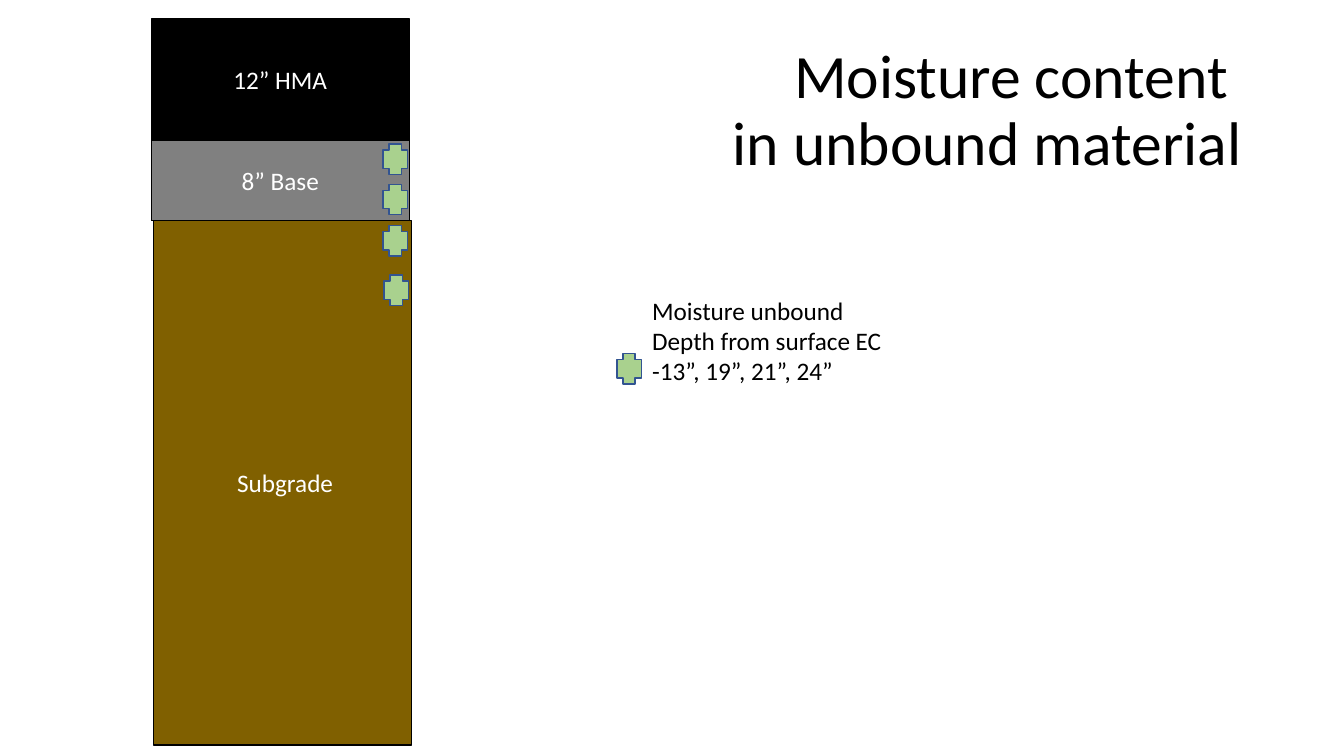
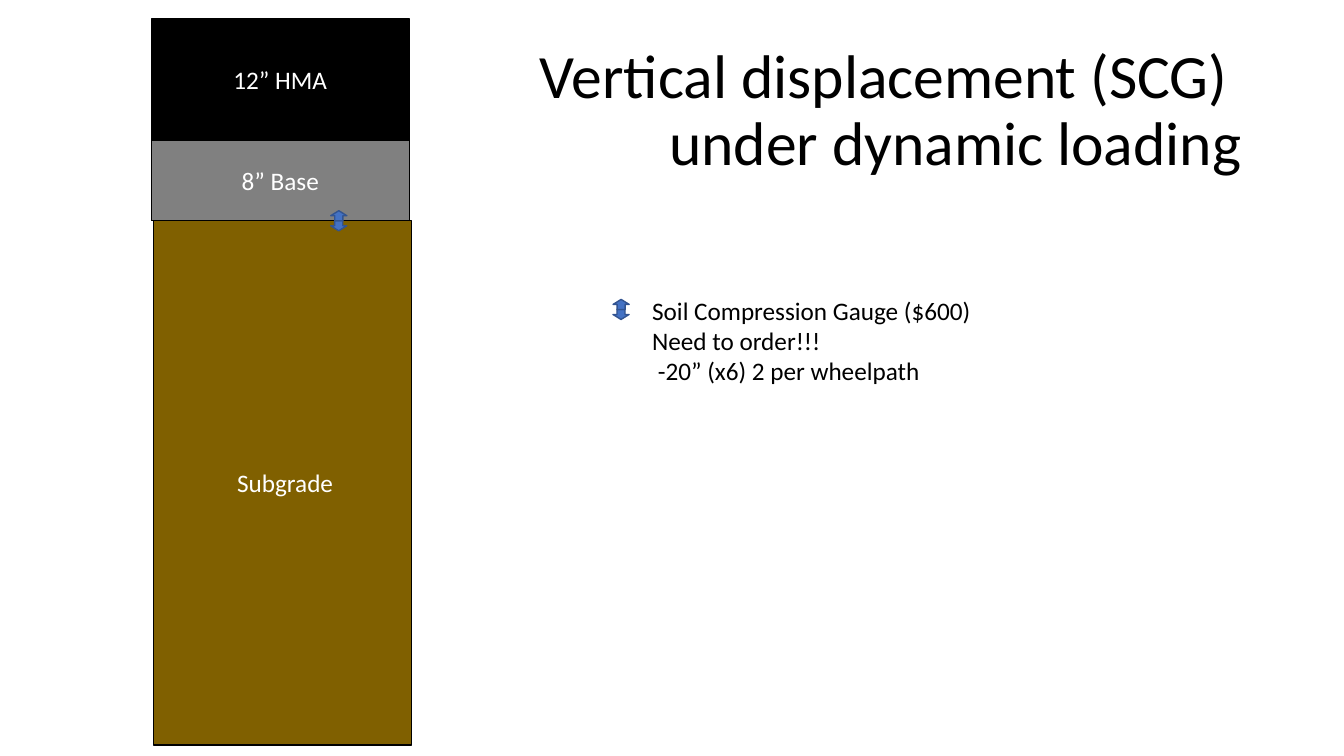
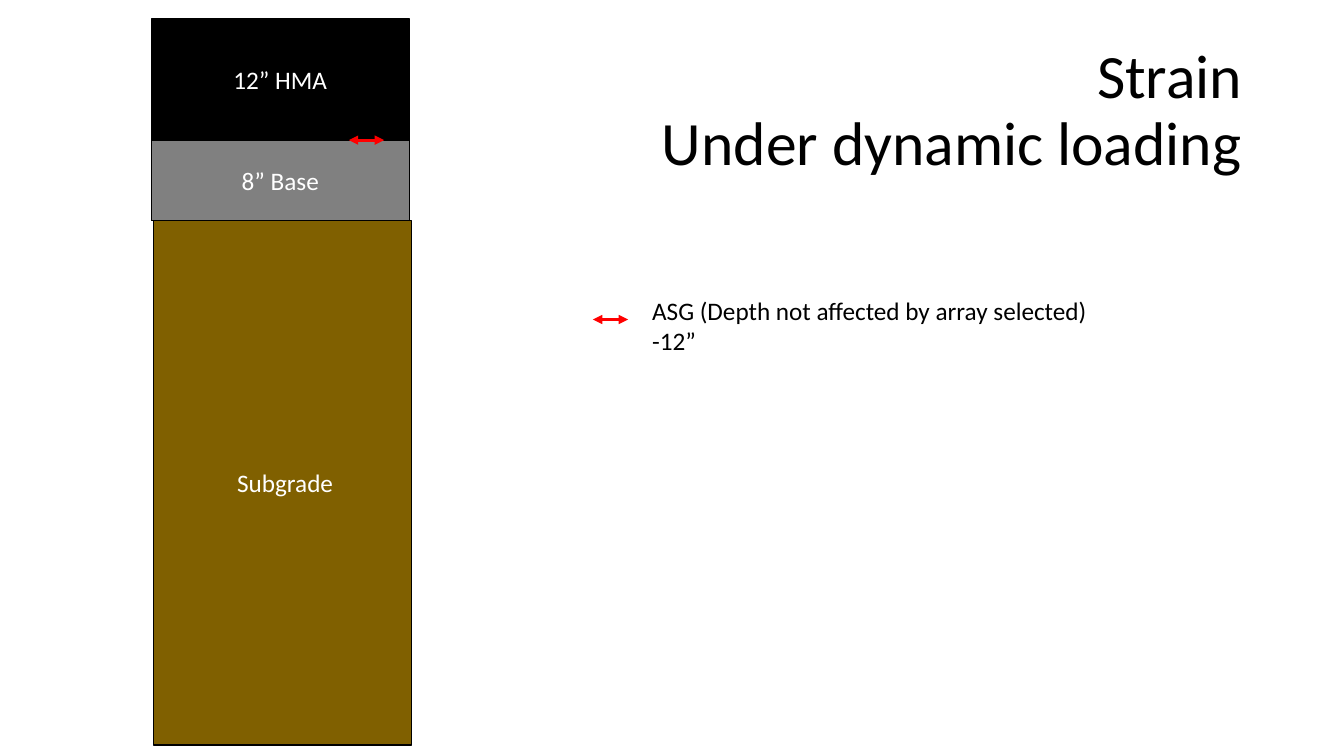
from dataclasses import dataclass

from lxml.etree import SubElement as Sub
from pptx import Presentation
from pptx.dml.color import RGBColor as Rgb
from pptx.enum.shapes import MSO_CONNECTOR as Conn, MSO_SHAPE as Kind
from pptx.enum.text import MSO_ANCHOR as Anchor, MSO_AUTO_SIZE as Fit, PP_ALIGN as Align
from pptx.oxml.ns import qn
from pptx.util import Inches, Pt

BLACK, WHITE, GRAY, BROWN = "000000", "FFFFFF", "808080", "806000"
GREEN, BLUE, NAVY, RED = "A9D18E", "4472C4", "325491", "FF0000"

BODY = {"name": "Calibri", "size": Pt(18)}
HEAD = {"name": "Calibri", "size": Pt(44)}
LEFT = {"alignment": Align.LEFT}
MID = {"alignment": Align.CENTER}
RIGHT = {"alignment": Align.RIGHT, "line_spacing": 0.9}


@dataclass(frozen=True)
class Layer:
    label: str
    left: float
    height: float
    fill: str


@dataclass(frozen=True)
class Topic:
    title: tuple
    note: tuple
    width: float
    mark: object
    spots: tuple


LAYERS = (
    Layer("12” HMA", 1.5, 1.2, BLACK),
    Layer("8” Base", 1.5, 0.8, GRAY),
    Layer(" Subgrade", 1.52, 5.2, BROWN),
)


def paint(color, code: str) -> None:
    color.rgb = Rgb.from_string(code)


def apply(item, style: dict) -> None:
    for key, value in style.items():
        setattr(item, key, value)


def write(frame, lines: tuple, font: dict, para: dict, code: str) -> None:
    frame.word_wrap = True
    for i, line in enumerate(lines):
        par = frame.add_paragraph() if i else frame.paragraphs[0]
        apply(par, para)
        run = par.add_run()
        run.text = line
        apply(run.font, font)
        paint(run.font.color, code)


def add_box(slide, kind, at: tuple, fill: str, edge: str):
    box = slide.shapes.add_shape(kind, *map(Inches, at))
    box.shadow.inherit = False
    box.fill.solid()
    paint(box.fill.fore_color, fill)
    box.line.width = Pt(1)
    paint(box.line.color, edge)
    return box


def add_text(slide, at: tuple, lines: tuple, font: dict, para: dict):
    frame = slide.shapes.add_textbox(*map(Inches, at)).text_frame
    write(frame, lines, font, para, BLACK)
    return frame


def add_plus(slide, x: float, y: float) -> None:
    add_box(slide, Kind.CROSS, (x, y, 0.24, 0.3), GREEN, NAVY)


def add_gauge(slide, x: float, y: float) -> None:
    for top, turn in ((y, 0), (y - 0.1, 180)):
        arrow = add_box(slide, Kind.DOWN_ARROW, (x, top, 0.16, 0.1), BLUE, NAVY)
        arrow.rotation = turn


def add_strain(slide, x: float, y: float) -> None:
    line = slide.shapes.add_connector(Conn.STRAIGHT, *map(Inches, (x, y, x + 0.35, y)))
    line.line.width = Pt(2.25)
    paint(line.line.color, RED)
    props = line.line._get_or_add_ln()
    for end in ("a:headEnd", "a:tailEnd"):
        Sub(props, qn(end), type="triangle")
    Sub(line._element.spPr, qn("a:effectLst"))


def add_layers(slide) -> None:
    top = 0.19
    for layer in LAYERS:
        at = (layer.left, top, 2.56, layer.height)
        frame = add_box(slide, Kind.RECTANGLE, at, layer.fill, BLACK).text_frame
        frame.vertical_anchor = Anchor.MIDDLE
        write(frame, (layer.label,), BODY, MID, WHITE)
        top += layer.height


def add_topic(deck, topic: Topic) -> None:
    slide = deck.slides.add_slide(deck.slide_layouts[6])
    size = (topic.width, 0.11 + 0.3 * len(topic.note))
    note = add_text(slide, (6.37, 2.88, *size), topic.note, BODY, LEFT)
    note.auto_size = Fit.SHAPE_TO_FIT_TEXT
    add_layers(slide)
    add_text(slide, (0.92, 0.4, 11.5, 1.45), topic.title, HEAD, RIGHT)
    for x, y in topic.spots:
        topic.mark(slide, x, y)


TOPICS = (
    Topic(
        ("Moisture content ", "in unbound material"),
        ("Moisture unbound", "Depth from surface EC", "-13”, 19”, 21”, 24”"),
        2.5,
        add_plus,
        ((6.12, 3.51), (3.8, 1.43), (3.8, 1.83), (3.8, 2.24), (3.81, 2.73)),
    ),
    Topic(
        ("Vertical displacement (SCG) ", "under dynamic loading"),
        ("Soil Compression Gauge ($600)", "Need to order!!!", " -20” (x6) 2 per wheelpath"),
        3.93,
        add_gauge,
        ((3.28, 2.19), (6.08, 3.07)),
    ),
    Topic(
        ("Strain", "Under dynamic loading"),
        ("ASG (Depth not affected by array selected)", "-12”"),
        4.57,
        add_strain,
        ((5.88, 3.17), (3.46, 1.39)),
    ),
)


def main() -> None:
    deck = Presentation()
    apply(deck, {"slide_width": Inches(13.33), "slide_height": Inches(7.5)})
    for topic in TOPICS:
        add_topic(deck, topic)
    deck.save("out.pptx")


if __name__ == "__main__":
    main()
